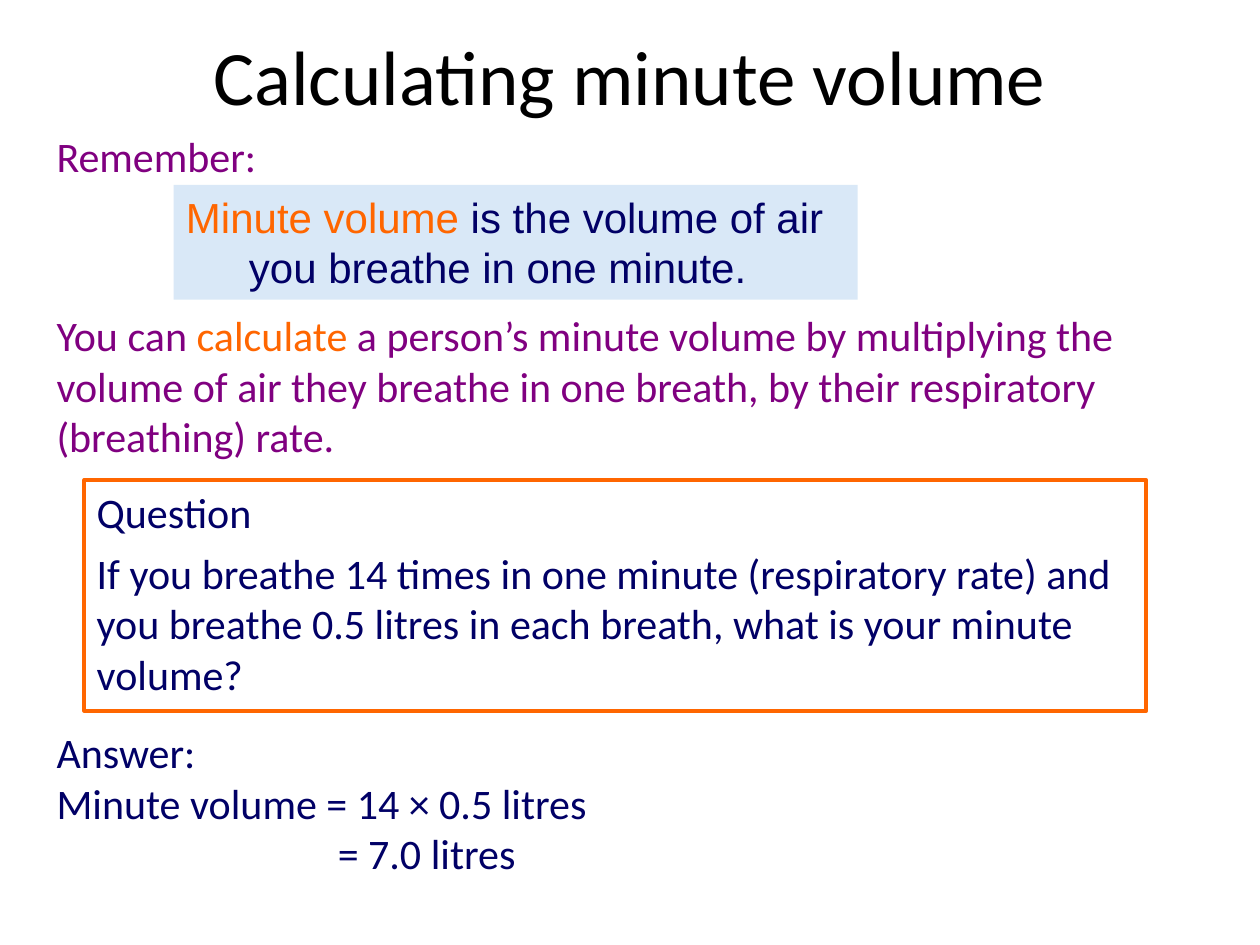
"""Builds a slide that explains how to calculate minute volume."""
from dataclasses import dataclass
from typing import Optional

from pptx import Presentation
from pptx.dml.color import RGBColor
from pptx.enum.shapes import MSO_SHAPE
from pptx.enum.text import MSO_ANCHOR, PP_ALIGN
from pptx.util import Cm, Pt

BLACK = RGBColor(0x00, 0x00, 0x00)
NAVY = RGBColor(0x01, 0x00, 0x66)
PURPLE = RGBColor(0x80, 0x00, 0x80)
ORANGE = RGBColor(0xFF, 0x66, 0x00)
PALE_BLUE = RGBColor(0xD9, 0xE8, 0xF7)


@dataclass(frozen=True)
class Span:
    text: str
    color: Optional[RGBColor] = None


@dataclass(frozen=True)
class Line:
    spans: tuple[Span, ...]
    left: float = 0
    first: float = 0


@dataclass(frozen=True)
class Block:
    left: float
    top: float
    width: float
    height: float
    lines: tuple[Line, ...]
    color: RGBColor = NAVY
    font: str = "Calibri"
    size: int = 24
    space_before: int = 0
    align: PP_ALIGN = PP_ALIGN.LEFT
    anchor: MSO_ANCHOR = MSO_ANCHOR.TOP
    fill: Optional[RGBColor] = None
    outline: Optional[RGBColor] = None


def plain(text: str, left: float = 0) -> Line:
    return Line((Span(text),), left)


BLOCKS = (
    Block(1.27, -0.08, 22.86, 3.18, (plain("Calculating minute volume"),), BLACK,
          size=44, align=PP_ALIGN.CENTER, anchor=MSO_ANCHOR.MIDDLE),
    Block(1.7, 9.68, 21.41, 4.65, (
        plain("Question"),
        plain("If you breathe 14 times in one minute (respiratory rate) and you "
              "breathe 0.5 litres in each breath, what is your minute volume?"),
    ), space_before=6, outline=ORANGE),
    Block(0.89, 14.53, 16.99, 3.33, (
        plain("Answer:"),
        plain("Minute volume = 14 × 0.5 litres"),
        plain("= 7.0 litres", left=5.67),
    )),
    Block(0.89, 2.51, 12.19, 1.27, (plain("Remember:"),), PURPLE),
    Block(0.89, 6.12, 23.19, 3.33, (Line((
        Span("You can "),
        Span("calculate", ORANGE),
        Span(" a person’s minute volume by multiplying the volume of air they "
             "breathe in one breath, by their respiratory (breathing) rate."),
    )),), PURPLE),
    Block(3.5, 3.73, 13.79, 2.31, (Line((
        Span("Minute volume", ORANGE),
        Span(" is the volume of air you breathe in one minute."),
    ), left=1.27, first=-1.27),), font="Arial", fill=PALE_BLUE),
)


def draw_block(page, block: Block) -> None:
    place = (Cm(block.left), Cm(block.top), Cm(block.width), Cm(block.height))
    if block.fill or block.outline:
        box = page.shapes.add_shape(MSO_SHAPE.RECTANGLE, *place)
        box.shadow.inherit = False
        if block.fill:
            box.fill.solid()
            box.fill.fore_color.rgb = block.fill
        else:
            box.fill.background()
        if block.outline:
            box.line.color.rgb = block.outline
            box.line.width = Pt(2.25)
        else:
            box.line.fill.background()
    else:
        box = page.shapes.add_textbox(*place)
    frame = box.text_frame
    frame.word_wrap = True
    frame.vertical_anchor = block.anchor
    for index, line in enumerate(block.lines):
        para = frame.paragraphs[0] if index == 0 else frame.add_paragraph()
        write_line(para, line, block)


def write_line(para, line: Line, block: Block) -> None:
    para.alignment = block.align
    para.space_before = Pt(block.space_before)
    para.font.name = block.font
    para.font.size = Pt(block.size)
    para.font.color.rgb = block.color
    properties = para._p.get_or_add_pPr()
    properties.set("marL", str(Cm(line.left)))
    properties.set("indent", str(Cm(line.first)))
    for part in line.spans:
        span = para.add_run()
        span.text = part.text
        if part.color:
            span.font.color.rgb = part.color


def main() -> None:
    deck = Presentation()
    deck.slide_width, deck.slide_height = Cm(25.4), Cm(19.05)
    page = deck.slides.add_slide(deck.slide_layouts[6])
    for block in BLOCKS:
        draw_block(page, block)
    deck.save("out.pptx")


if __name__ == "__main__":
    main()
